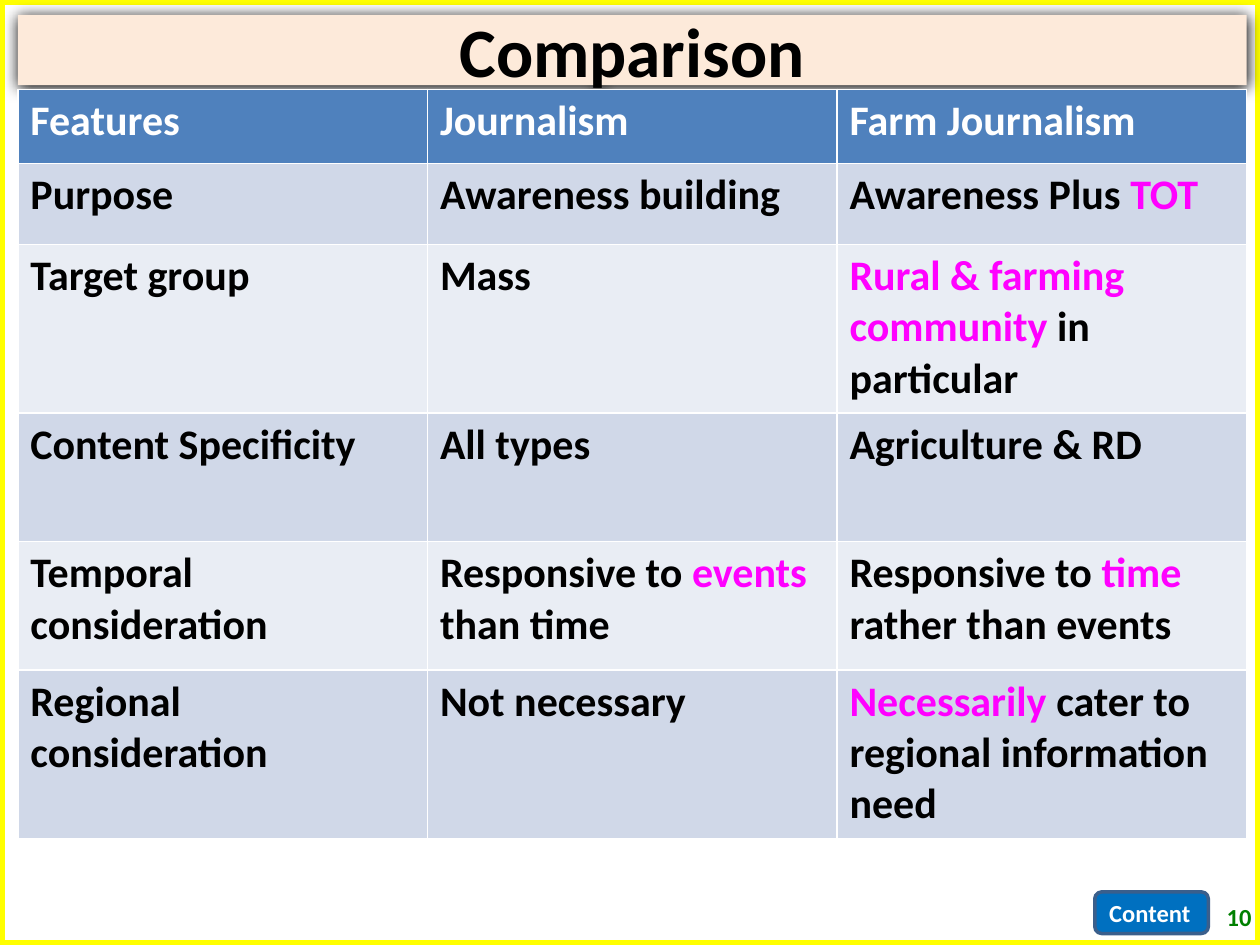
import dataclasses

import lxml.etree
import pptx
import pptx.dml.color
import pptx.enum.shapes
import pptx.enum.text
import pptx.oxml.ns
import pptx.util

Cm = pptx.util.Cm
Pt = pptx.util.Pt
SHAPE = pptx.enum.shapes.MSO_SHAPE
ALIGN = pptx.enum.text.PP_ALIGN


@dataclasses.dataclass(frozen=True)
class Theme:
    font: str = "Calibri"
    title_size: float = 39.6
    table_size: float = 24
    small_size: float = 14
    black: str = "000000"
    white: str = "FFFFFF"
    frame: str = "FFFF00"
    title_fill: str = "FDEADA"
    header: str = "4F81BD"
    bands: tuple = ("D0D8E8", "E9EDF4")
    highlight: str = "FF00FF"
    button: str = "0070C0"
    button_line: str = "3A5F8C"
    page_number: str = "008000"


THEME = Theme()
LEFT, WIDTH = 0.36, 24.77
ROW_HEIGHTS = (1.5, 1.63, 3.4, 2.59, 2.59, 3.4)

# Words between asterisks are highlighted.
ROWS = (
    ("Features", "Journalism", "Farm Journalism"),
    ("Purpose", "Awareness building", "Awareness Plus *TOT*"),
    ("Target group", "Mass", "*Rural & farming community *in particular"),
    ("Content Specificity", "All types", "Agriculture & RD"),
    ("Temporal consideration", "Responsive to *events* than time",
     "Responsive to *time* rather than events"),
    ("Regional consideration", "Not necessary",
     "*Necessarily *cater to regional information need"),
)


def rgb(color):
    return pptx.dml.color.RGBColor.from_string(color)


def format_run(r, size, color):
    r.font.name = THEME.font
    r.font.size = Pt(size)
    r.font.bold = True
    r.font.color.rgb = rgb(color)


def set_text(sp, text, size, color, align):
    tf = sp.text_frame
    tf.text = text
    tf.word_wrap = True
    tf.vertical_anchor = pptx.enum.text.MSO_ANCHOR.MIDDLE
    p = tf.paragraphs[0]
    p.alignment = align
    format_run(p.runs[0], size, color)


def add_box(s, kind, box, fill=None, line=None, line_width=0):
    sp = s.shapes.add_shape(kind, *map(Cm, box))
    sp.shadow.inherit = False
    if fill:
        sp.fill.solid()
        sp.fill.fore_color.rgb = rgb(fill)
    else:
        sp.fill.background()
    if line:
        sp.line.color.rgb = rgb(line)
        sp.line.width = Pt(line_width)
    else:
        sp.line.fill.background()
    return sp


def add_shadow(sp):
    """Give the shape a soft black shadow that falls downwards."""
    qn = pptx.oxml.ns.qn
    effects = sp.element.spPr.find(qn("a:effectLst"))
    shadow = lxml.etree.SubElement(
        effects, qn("a:outerShdw"), blurRad=str(Pt(8.5)), dist=str(Pt(1)),
        dir="5400000", algn="ctr", rotWithShape="0")
    lxml.etree.SubElement(shadow, qn("a:srgbClr"), val=THEME.black)


def fill_cell(cell, text, fill, color):
    cell.fill.solid()
    cell.fill.fore_color.rgb = rgb(fill)
    p = cell.text_frame.paragraphs[0]
    for i, part in enumerate(text.split("*")):
        if part:
            r = p.add_run()
            r.text = part
            format_run(r, THEME.table_size, THEME.highlight if i % 2 else color)


def add_comparison_table(s):
    columns = len(ROWS[0])
    table = s.shapes.add_table(
        len(ROWS), columns, Cm(LEFT), Cm(1.8), Cm(WIDTH), Cm(sum(ROW_HEIGHTS))).table
    for column in table.columns:
        column.width = Cm(WIDTH / columns)
    for i, (texts, height) in enumerate(zip(ROWS, ROW_HEIGHTS)):
        table.rows[i].height = Cm(height)
        fill = THEME.bands[(i - 1) % 2] if i else THEME.header
        color = THEME.black if i else THEME.white
        for j, text in enumerate(texts):
            fill_cell(table.cell(i, j), text, fill, color)


def main():
    prs = pptx.Presentation()
    prs.slide_width, prs.slide_height = Cm(25.4), Cm(19.05)
    s = prs.slides.add_slide(prs.slide_layouts[6])

    add_box(s, SHAPE.RECTANGLE, (0, 0, 25.4, 19.05), line=THEME.frame, line_width=6)

    button = add_box(s, SHAPE.ROUNDED_RECTANGLE, (22.07, 17.98, 2.29, 0.84),
                     THEME.button, THEME.button_line, 2)
    set_text(button, "Content", THEME.small_size, THEME.white, ALIGN.LEFT)

    title = add_box(s, SHAPE.RECTANGLE, (LEFT, 0.3, WIDTH, 1.42), THEME.title_fill)
    add_shadow(title)
    set_text(title, "Comparison", THEME.title_size, THEME.black, ALIGN.CENTER)

    add_comparison_table(s)

    number = s.shapes.add_textbox(Cm(24.21), Cm(17.98), Cm(1.27), Cm(0.99))
    set_text(number, "10", THEME.small_size, THEME.page_number, ALIGN.RIGHT)

    prs.save("out.pptx")


if __name__ == "__main__":
    main()
